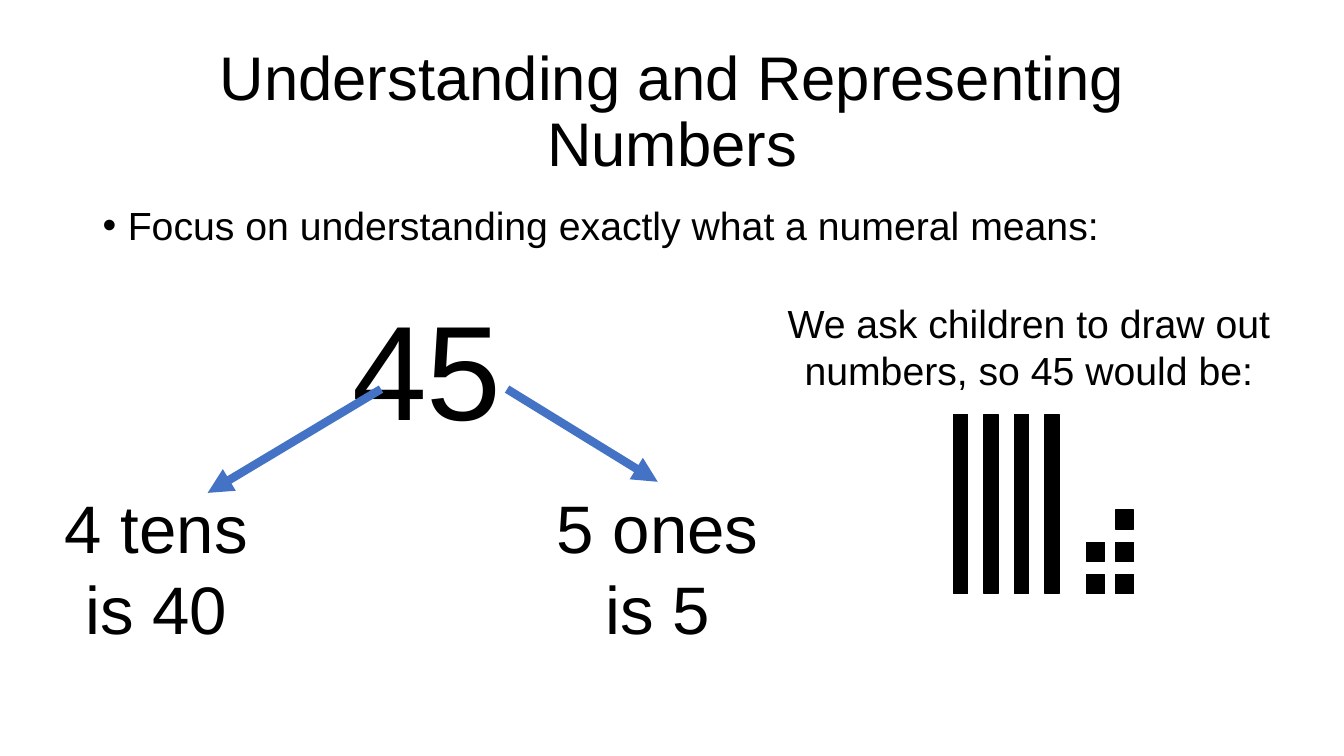
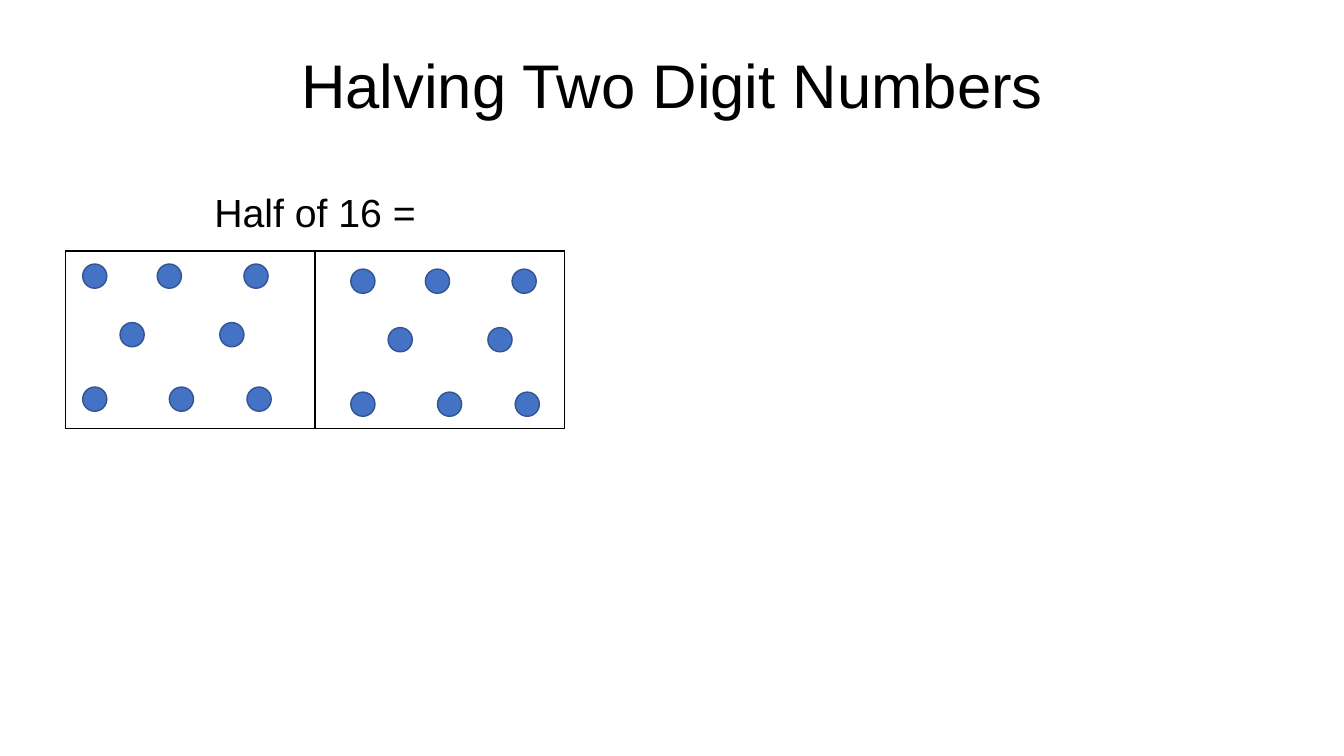
import pptx
import pptx.dml.color
import pptx.enum.shapes
import pptx.enum.text
import pptx.oxml
import pptx.oxml.ns
import pptx.util

SLIDE_W = pptx.util.Inches(13.33)
SLIDE_H = pptx.util.Inches(7.5)
FONT = "Arial"
BLACK, WHITE, BLUE, NAVY = "000000", "FFFFFF", "4472C4", "325491"
LEFT, CENTER = pptx.enum.text.PP_ALIGN.LEFT, pptx.enum.text.PP_ALIGN.CENTER
RECT = pptx.enum.shapes.MSO_SHAPE.RECTANGLE
OVAL = pptx.enum.shapes.MSO_SHAPE.OVAL


def rgb(value):
    """Turn a hex string into a colour."""
    return pptx.dml.color.RGBColor.from_string(value)


def at(*shares):
    """Turn alternating percentages of slide width and height into lengths."""
    return [int(share * (SLIDE_H if i % 2 else SLIDE_W) / 100)
            for i, share in enumerate(shares)]


def xml(tag, attrs="", inner=""):
    """Make one DrawingML element."""
    return pptx.oxml.parse_xml(
        f'<a:{tag} {pptx.oxml.ns.nsdecls("a")} {attrs}>{inner}</a:{tag}>')


def write(tf, text, size=28, align=CENTER, spacing=None, bullet=False):
    """Write one formatted paragraph into a text frame."""
    tf.word_wrap = True
    tf.auto_size = pptx.enum.text.MSO_AUTO_SIZE.NONE
    p = tf.paragraphs[0]
    p.text = text
    p.alignment = align
    if spacing:
        p.line_spacing = spacing
    if bullet:
        pPr = p._p.get_or_add_pPr()
        pPr.set("marL", str(pptx.util.Inches(0.25)))
        pPr.set("indent", str(pptx.util.Inches(-0.25)))
        pPr.append(xml("buFont", 'typeface="Arial"'))
        pPr.append(xml("buChar", 'char="•"'))
    font = p.runs[0].font
    font.name = FONT
    font.size = pptx.util.Pt(size)
    font.color.rgb = rgb(BLACK)


def add_text(s, box, text, **fmt):
    """Add a text box at the given shares of the slide."""
    sp = s.shapes.add_textbox(*at(*box))
    write(sp.text_frame, text, **fmt)
    return sp


def add_slide(prs, title, top):
    """Add a title-only slide with the shared title style."""
    s = prs.slides.add_slide(prs.slide_layouts[5])
    sp = s.shapes.title
    sp.left, sp.top, sp.width, sp.height = at(6.9, top, 86.25, 19.33)
    sp.text_frame.vertical_anchor = pptx.enum.text.MSO_ANCHOR.MIDDLE
    write(sp.text_frame, title, size=44, spacing=0.9)
    return s


def add_block(s, kind, box, fill, line):
    """Add a filled and outlined preset shape."""
    sp = s.shapes.add_shape(kind, *at(*box))
    sp.shadow.inherit = False
    sp.fill.solid()
    sp.fill.fore_color.rgb = rgb(fill)
    sp.line.color.rgb = rgb(line)
    sp.line.width = pptx.util.Pt(1)


def add_arrow(s, points, target=None):
    """Add a thick arrow, joined to the top of a target if one is given."""
    arrow = s.shapes.add_connector(
        pptx.enum.shapes.MSO_CONNECTOR.STRAIGHT, *at(*points))
    if target is not None:
        arrow.end_connect(target, 0)
    arrow.line.color.rgb = rgb(BLUE)
    arrow.line.width = pptx.util.Pt(6)
    arrow.line._get_or_add_ln().append(xml("tailEnd", 'type="triangle"'))
    arrow._element.spPr.append(xml("effectLst"))


def add_halves(s, box):
    """Add a one-row table of two equal outlined cells."""
    table = s.shapes.add_table(1, 2, *at(*box)).table
    table.first_row = table.horz_banding = False
    for cell in table.iter_cells():
        cell.fill.solid()
        cell.fill.fore_color.rgb = rgb(WHITE)
        tcPr = cell._tc.get_or_add_tcPr()
        for i, side in enumerate(("lnL", "lnR", "lnT", "lnB")):
            tcPr.insert(i, xml(side, f'w="{pptx.util.Pt(1)}"',
                               f'<a:solidFill><a:srgbClr val="{BLACK}"/></a:solidFill>'))


def add_tens(s, count):
    """Draw a row of tall bars, one for each ten."""
    for i in range(count):
        add_block(s, RECT, (70.95 + 2.27 * i, 54.8, 1.05, 23.73), BLACK, BLACK)


def add_ones(s, count):
    """Stack squares in pairs from the bottom, right column first."""
    for i in range(count):
        row, col = divmod(i, 2)
        add_block(s, RECT, (83 - 2.15 * col, 76 - 4.27 * row, 1.35, 2.53),
                  BLACK, BLACK)


def add_dots(s, dx, dy):
    """Draw one half's group of eight dots, shifted by the given shares."""
    rows = [(34.93, (6.15, 11.7, 18.15)),
            (42.67, (8.93, 16.35)),
            (51.2, (6.15, 12.6, 18.38))]
    for y, xs in rows:
        for x in xs:
            add_block(s, OVAL, (x + dx, y + dy, 1.8, 3.2), BLUE, NAVY)


def build_numbers(prs):
    """Build the slide on tens and ones."""
    s = add_slide(prs, "Understanding and Representing Numbers", 5.33)
    add_text(s, (6.9, 26.67, 86.25, 8),
             "Focus on understanding exactly what a numeral means:",
             align=LEFT, spacing=0.9, bullet=True)
    add_text(s, (18, 37.2, 27.53, 22.93), "45", size=96)
    add_text(s, (1.73, 63.73, 19.8, 22.93), "4 tens is 40", size=48)
    ones = add_text(s, (38.7, 63.73, 20.48, 22.93), "5 ones is 5", size=48)
    add_arrow(s, (28.35, 51.47, 15.45, 65.2))
    add_arrow(s, (37.73, 51.47, 48.98, 63.73), ones)
    add_text(s, (54.83, 38.93, 43.43, 13.87),
             "We ask children to draw out numbers, so 45 would be:")
    add_tens(s, 4)
    add_ones(s, 5)


def build_halving(prs):
    """Build the slide on halving."""
    s = add_slide(prs, "Halving Two Digit Numbers", 2)
    add_text(s, (4.88, 24.93, 37.13, 7.73), "Half of 16 =", spacing=0.9)
    add_halves(s, (4.88, 33.2, 37.13, 23.47))
    add_dots(s, 0, 0)
    add_dots(s, 19.95, 0.67)


def main():
    """Build and save the presentation."""
    prs = pptx.Presentation()
    prs.slide_width, prs.slide_height = SLIDE_W, SLIDE_H
    build_numbers(prs)
    build_halving(prs)
    prs.save("out.pptx")


if __name__ == "__main__":
    main()
